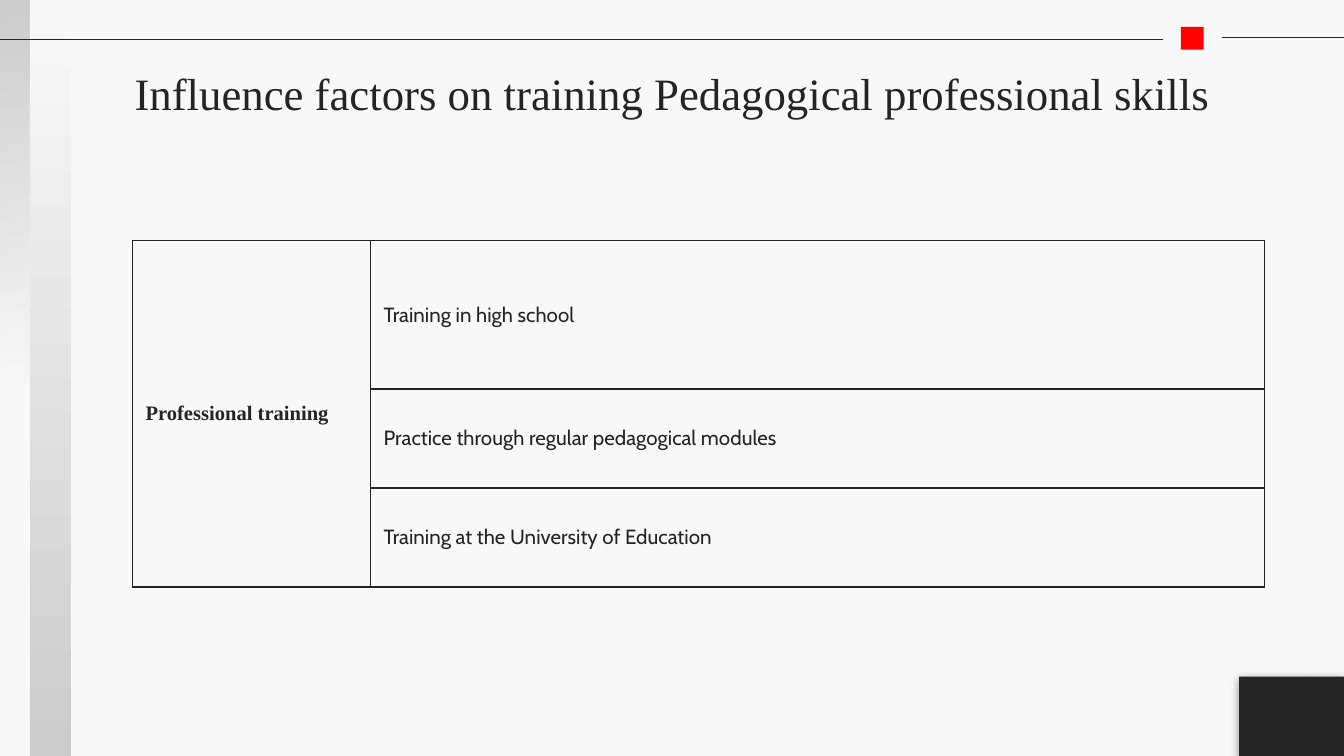
from collections import namedtuple

from lxml.etree import SubElement
from pptx import Presentation
from pptx.dml.color import RGBColor
from pptx.enum.shapes import MSO_CONNECTOR as Connector, MSO_SHAPE as Shape
from pptx.enum.text import MSO_ANCHOR as Anchor, PP_ALIGN as Align
from pptx.oxml import parse_xml
from pptx.oxml.ns import nsdecls, qn
from pptx.util import Cm, Pt

COLORS = {"paper": "F8F8F8", "ink": "242424", "gray": "CCCCCC", "accent": "FF0000"}
SERIF = "Times New Roman"
SANS = "Cabin"
Box = namedtuple("Box", "left top width height")


def color(name):
    """Return the named palette colour."""
    return RGBColor.from_string(COLORS[name])


def write_text(frame, text, font=SANS, size=11, bold=False, align=Align.LEFT, after=0):
    """Write one formatted paragraph into a text frame."""
    paragraph = frame.paragraphs[0]
    paragraph.alignment = align
    paragraph.space_after = Pt(after)
    run = paragraph.add_run()
    run.text = text
    run.font.name = font
    run.font.size = Pt(size)
    run.font.bold = bold
    run.font.color.rgb = color("ink")


def add_rectangle(slide, box, fill="paper"):
    """Add a plain rectangle without outline or shadow."""
    shape = slide.shapes.add_shape(Shape.RECTANGLE, *map(Cm, box))
    shape.shadow.inherit = False
    shape.fill.solid()
    shape.fill.fore_color.rgb = color(fill)
    shape.line.fill.background()
    return shape


def add_rule(slide, left, right, y):
    """Add a thin horizontal line."""
    line = slide.shapes.add_connector(Connector.STRAIGHT, Cm(left), Cm(y), Cm(right), Cm(y))
    line.line.color.rgb = color("ink")
    line.line.width = Pt(0.75)
    SubElement(line._element.spPr, qn("a:effectLst"))


def set_gradient(shape, stops, angle):
    """Replace a solid fill by a linear gradient with a clockwise angle."""
    stop_xml = "".join(
        f'<a:gs pos="{position * 1000}"><a:srgbClr val="{COLORS[name]}"/></a:gs>'
        for position, name in stops
    )
    gradient = parse_xml(
        f'<a:gradFill {nsdecls("a")} rotWithShape="1"><a:gsLst>{stop_xml}</a:gsLst>'
        f'<a:lin ang="{angle * 60000}" scaled="0"/></a:gradFill>'
    )
    properties = shape._element.spPr
    properties.replace(properties.find(qn("a:solidFill")), gradient)


def set_shadow(shape):
    """Give a shape a soft shadow below it."""
    effects = shape._element.spPr.find(qn("a:effectLst"))
    effects.append(parse_xml(
        f'<a:outerShdw {nsdecls("a")} blurRad="{Pt(4.5)}" dist="{Pt(1.5)}" dir="5400000">'
        f'<a:srgbClr val="{COLORS["ink"]}"><a:alpha val="50000"/></a:srgbClr></a:outerShdw>'
    ))


def set_borders(cell):
    """Draw a thin line on all four sides of a cell."""
    properties = cell._tc.get_or_add_tcPr()
    for index, side in enumerate(("lnL", "lnR", "lnT", "lnB")):
        properties.insert(index, parse_xml(
            f'<a:{side} {nsdecls("a")} w="{Pt(0.75)}"><a:solidFill>'
            f'<a:srgbClr val="{COLORS["ink"]}"/></a:solidFill></a:{side}>'
        ))


def add_side_band(slide, box):
    """Add the two shaded strips along the left edge."""
    split = 0.56
    outer = Box(box.left, box.top, split, box.height)
    inner = Box(box.left + split, box.top, box.width - split, box.height)
    set_gradient(add_rectangle(slide, inner), [(0, "paper"), (100, "gray")], 90)
    set_gradient(
        add_rectangle(slide, outer), [(0, "paper"), (47, "paper"), (100, "gray")], 260
    )


def add_top_rule(slide, box):
    """Add the top line, broken by a small square."""
    right = box.left + box.width
    side = box.height
    add_rule(slide, box.left, right - 3.43, box.top + 0.24)
    add_rectangle(slide, Box(right - 3.08, box.top, side, side), "accent")
    add_rule(slide, right - 2.31, right, box.top + 0.2)


def add_corner_block(slide, box):
    """Add the dark block in the lower right corner."""
    set_shadow(add_rectangle(slide, box, "ink"))


def add_title(slide, box, text):
    """Add the centred slide title."""
    frame = slide.shapes.add_textbox(*map(Cm, box)).text_frame
    frame.word_wrap = True
    frame.vertical_anchor = Anchor.MIDDLE
    frame.margin_left = frame.margin_right = Cm(0.25)
    frame.margin_top = frame.margin_bottom = Cm(0.25)
    write_text(frame, text, font=SERIF, size=24, align=Align.CENTER)


def add_factor_table(slide, box, heading, factors):
    """Add a table with one merged heading beside its factors."""
    table = slide.shapes.add_table(len(factors), 2, *map(Cm, box)).table
    table.first_row = table.horz_banding = False
    heading_width = 4.5
    table.columns[0].width = Cm(heading_width)
    table.columns[1].width = Cm(box.width - heading_width)
    shares = (3, 2, 2)
    for row, share in zip(table.rows, shares):
        row.height = Cm(box.height * share / sum(shares))
    for cell in table.iter_cells():
        cell.fill.background()
        cell.vertical_anchor = Anchor.MIDDLE
        cell.margin_left = cell.margin_right = Cm(0.25)
        cell.margin_top = cell.margin_bottom = 0
        set_borders(cell)
    table.cell(0, 0).merge(table.cell(len(factors) - 1, 0))
    write_text(table.cell(0, 0).text_frame, heading, font=SERIF, bold=True)
    for index, factor in enumerate(factors):
        write_text(table.cell(index, 1).text_frame, factor, after=16)


def main():
    """Build and save the presentation."""
    presentation = Presentation()
    width, height = 25.4, 14.28
    presentation.slide_width, presentation.slide_height = Cm(width), Cm(height)
    slide = presentation.slides.add_slide(presentation.slide_layouts[6])
    slide.background.fill.solid()
    slide.background.fill.fore_color.rgb = color("paper")
    add_side_band(slide, Box(0, 0, 1.34, height))
    add_top_rule(slide, Box(0, 0.51, width, 0.43))
    add_corner_block(slide, Box(width - 1.98, height - 1.5, 1.98, 1.5))
    add_title(
        slide,
        Box(2, 0.94, 21.4, 1.6),
        "Influence factors on training Pedagogical professional skills",
    )
    add_factor_table(
        slide,
        Box(2.5, 4.54, 21.4, 6.55),
        "Professional training",
        [
            "Training in high school",
            "Practice through regular pedagogical modules",
            "Training at the University of Education",
        ],
    )
    presentation.save("out.pptx")


if __name__ == "__main__":
    main()
